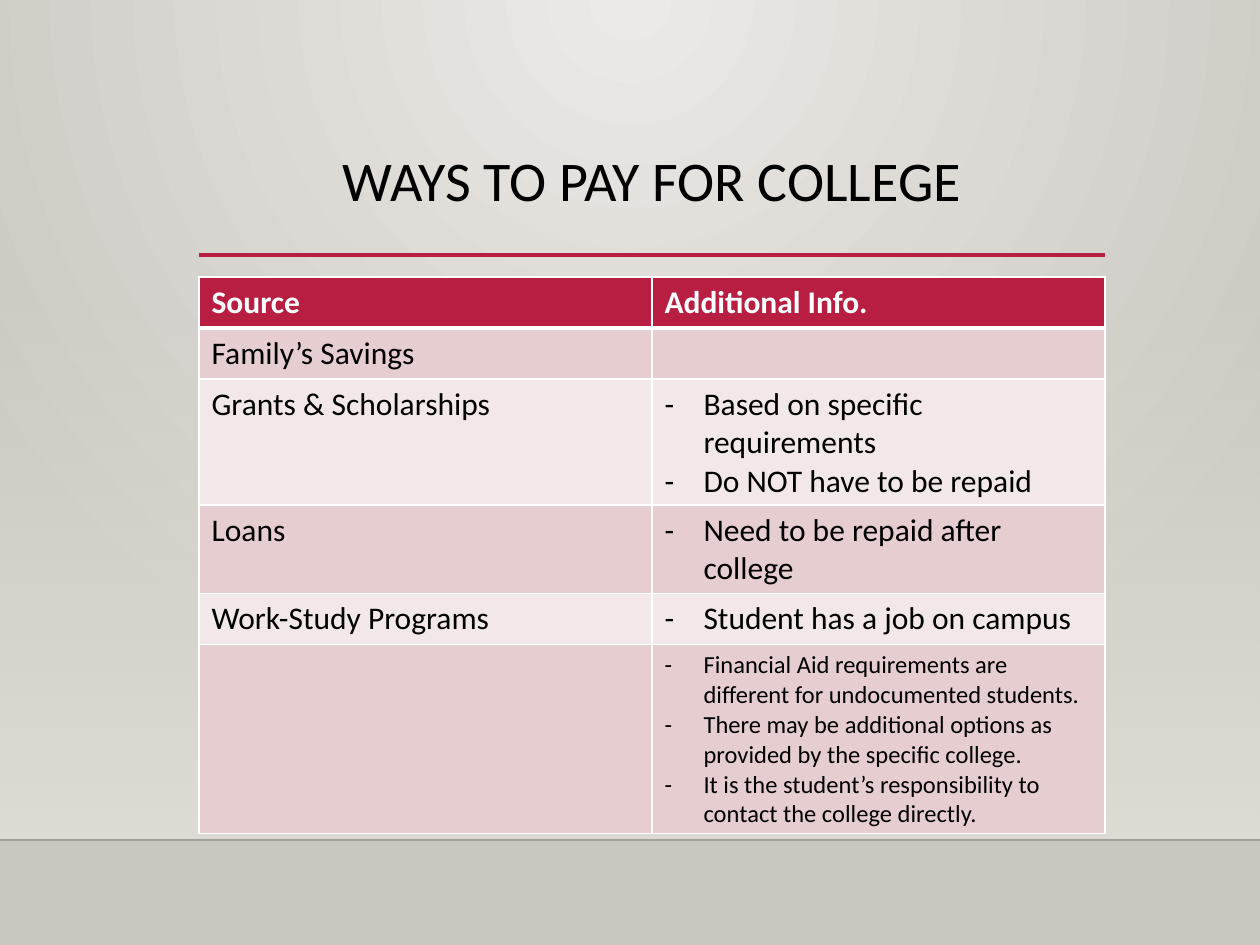
from lxml.etree import SubElement
from pptx import Presentation
from pptx.dml.color import RGBColor
from pptx.enum.shapes import MSO_CONNECTOR, MSO_SHAPE
from pptx.enum.text import MSO_ANCHOR, PP_ALIGN
from pptx.oxml import parse_xml
from pptx.oxml.ns import nsdecls, qn
from pptx.util import Emu, Pt

FONT = "Calibri"
BLACK = RGBColor(0x00, 0x00, 0x00)
WHITE = RGBColor(0xFF, 0xFF, 0xFF)
CRIMSON = RGBColor(0xB7, 0x1E, 0x42)
ROSE = RGBColor(0xE6, 0xCD, 0xCF)
PALE_ROSE = RGBColor(0xF3, 0xE8, 0xE9)
IVORY = RGBColor(0xEC, 0xEA, 0xE7)
STONE = RGBColor(0xCA, 0xC7, 0xC1)
SAND = RGBColor(0xDF, 0xDB, 0xD5)
FLOOR_EDGE = RGBColor(0x00, 0x00, 0x01)

SOURCES = [
    ("Family’s Savings", [], 18),
    ("Grants & Scholarships",
     ["Based on specific requirements", "Do NOT have to be repaid"], 18),
    ("Loans", ["Need to be repaid after college"], 18),
    ("Work-Study Programs", ["Student has a job on campus"], 18),
    ("", ["Financial Aid requirements are different for undocumented students.",
          "There may be additional options as provided by the specific college.",
          "It is the student’s responsibility to contact the college directly."], 14),
]


def px(length):
    return Emu(round(length * 914400 / 126))


def set_stops(fill, colors):
    fill.gradient()
    for stop, color, position in zip(fill.gradient_stops, colors, (0, 1)):
        stop.color.rgb = color
        stop.position = position


def set_alpha(element, percent):
    color = next(element.iter(qn("a:srgbClr")))
    SubElement(color, qn("a:alpha"), val=str(percent * 1000))


def add_rule(slide, left, top, width, color, weight):
    rule = slide.shapes.add_connector(
        MSO_CONNECTOR.STRAIGHT, px(left), px(top), px(left + width), px(top))
    rule.line.color.rgb = color
    rule.line.width = Pt(weight)
    SubElement(rule._element.spPr, qn("a:effectLst"))
    return rule


def add_backdrop(slide, left, top, width, height):
    set_stops(slide.background.fill, (IVORY, STONE))
    glow = next(slide.element.iter(qn("a:gradFill")))
    glow.replace(glow.find(qn("a:lin")), parse_xml(
        f'<a:path {nsdecls("a")} path="circle">'
        '<a:fillToRect l="43000" t="0" r="43000" b="100000"/></a:path>'))
    wall = slide.shapes.add_shape(
        MSO_SHAPE.RECTANGLE, px(left), px(top), px(width), px(height))
    wall.shadow.inherit = False
    wall.line.fill.background()
    set_stops(wall.fill, (SAND, SAND))
    wall.fill.gradient_angle = 270
    set_alpha(wall._element.spPr, 0)
    floor_edge = add_rule(slide, left, top + height + 1, width, FLOOR_EDGE, 1)
    set_alpha(floor_edge._element.spPr, 20)


def add_title(slide, left, top, width, height):
    title = slide.shapes.add_textbox(px(left), px(top), px(width), px(height))
    frame = title.text_frame
    frame.word_wrap = True
    frame.vertical_anchor = MSO_ANCHOR.MIDDLE
    heading = frame.paragraphs[0]
    heading.text = "WAYS TO PAY FOR COLLEGE"
    heading.alignment = PP_ALIGN.CENTER
    heading.line_spacing = 0.9
    style(heading, 32, BLACK)
    add_rule(slide, left, top + height - 1, width, CRIMSON, 2.5)


def style(paragraph, size, color, bold=False):
    paragraph.font.name = FONT
    paragraph.font.size = Pt(size)
    paragraph.font.color.rgb = color
    paragraph.font.bold = bold


def add_dash(paragraph):
    properties = paragraph._p.get_or_add_pPr()
    properties.set("marL", str(px(39)))
    properties.set("indent", str(-px(39)))
    SubElement(properties, qn("a:buFont"), typeface=FONT)
    SubElement(properties, qn("a:buChar"), char="-")


def set_borders(cell, top, bottom):
    properties = cell._tc.get_or_add_tcPr()
    weights = {"lnL": 1, "lnR": 1, "lnT": top, "lnB": bottom}
    for index, (side, weight) in enumerate(weights.items()):
        properties.insert(index, parse_xml(
            f'<a:{side} {nsdecls("a")} w="{Pt(weight)}"><a:solidFill>'
            f'<a:srgbClr val="{WHITE}"/></a:solidFill></a:{side}>'))


def fill_cell(cell, lines, size, color, fill, bold=False, dashed=False):
    cell.fill.solid()
    cell.fill.fore_color.rgb = fill
    cell.text = "\n".join(lines)
    for paragraph in cell.text_frame.paragraphs:
        if dashed and lines:
            add_dash(paragraph)
        style(paragraph, size, color, bold)


def add_sources(slide, left, top, width, row_height):
    count = len(SOURCES) + 1
    table = slide.shapes.add_table(
        count, 2, px(left), px(top), px(width), px(row_height * count)).table
    for column in table.columns:
        column.width = px(width // 2)
    for row in table.rows:
        row.height = px(row_height)
    for column, header in enumerate(("Source", "Additional Info.")):
        fill_cell(table.cell(0, column), [header], 18, WHITE, CRIMSON, bold=True)
    for row, (source, details, size) in enumerate(SOURCES, 1):
        band = ROSE if row % 2 else PALE_ROSE
        fill_cell(table.cell(row, 0), [source], 18, BLACK, band)
        fill_cell(table.cell(row, 1), details, size, BLACK, band, dashed=True)
    for row in range(count):
        for column in range(2):
            set_borders(table.cell(row, column),
                        3 if row == 1 else 1, 3 if row == 0 else 1)


def main():
    presentation = Presentation()
    presentation.slide_width, presentation.slide_height = px(1260), px(945)
    slide = presentation.slides.add_slide(presentation.slide_layouts[6])
    add_backdrop(slide, 0, 277, 1260, 562)
    add_title(slide, 199, 111, 906, 145)
    add_sources(slide, 199, 277, 906, 51)
    presentation.save("out.pptx")


if __name__ == "__main__":
    main()
